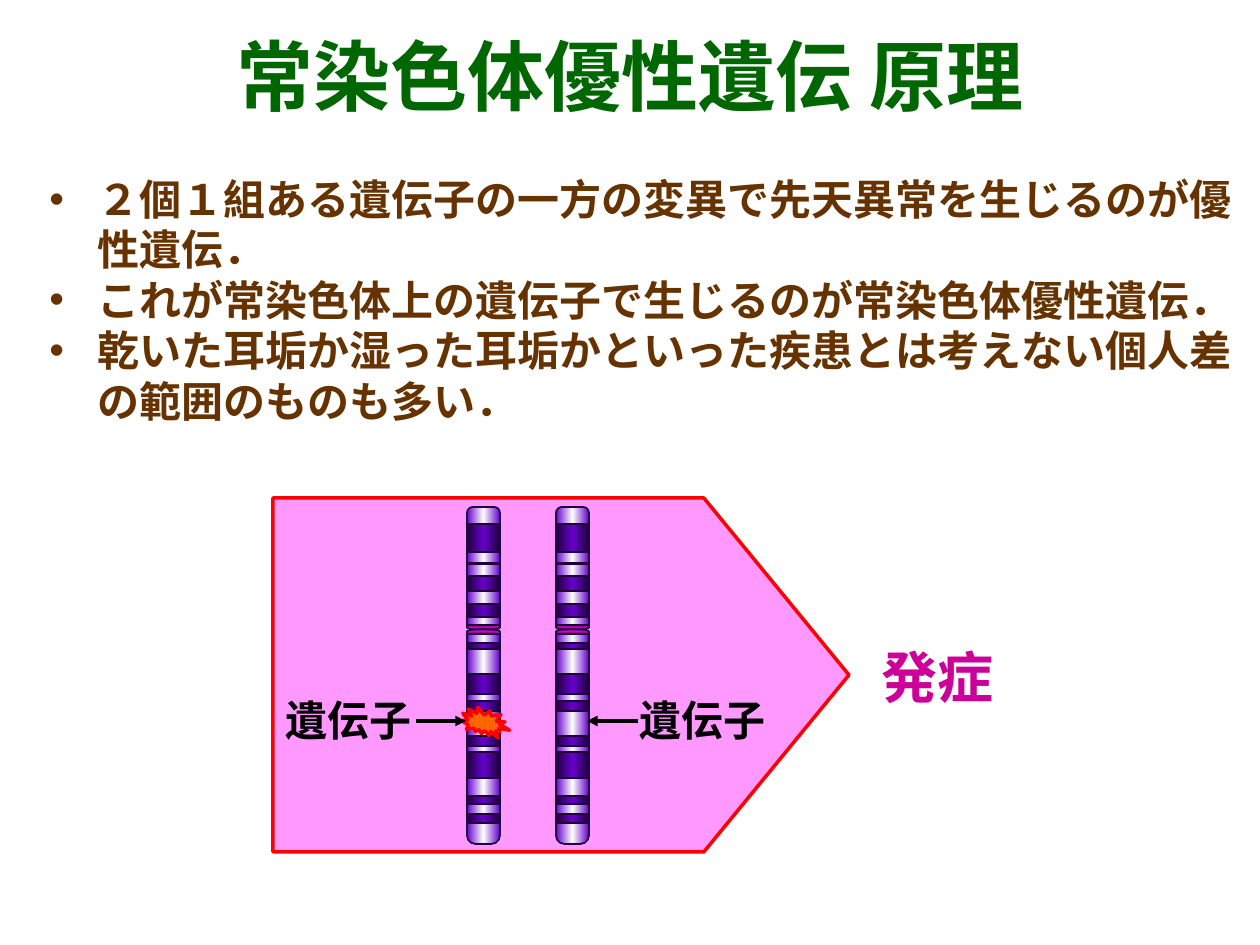
import lxml.etree
import pptx
import pptx.dml.color
import pptx.enum.shapes
import pptx.enum.text
import pptx.oxml.ns
import pptx.util

EMU_PER_PX = 914400 / 126
COLOURS = {
    "title": "006600", "body": "663300", "label": "000000", "outcome": "CC0099",
    "panel": "FF99FF", "alert": "FF0000", "mutation": "FF6600", "outline": "1E003C",
}
GRADIENTS = {
    "light": ("6600CC", "FFFFFF", "6600CC"),
    "dark": ("1E003C", "6600CC", "1E003C"),
    "centromere": ("660066", "CC00CC", "660066"),
}
JAPANESE_FONT = "Noto Sans CJK JP"
LATIN_FONT = "Arial"
BODY_POINTS = [
    "２個１組ある遺伝子の一方の変異で先天異常を生じるのが優性遺伝．",
    "これが常染色体上の遺伝子で生じるのが常染色体優性遺伝．",
    "乾いた耳垢か湿った耳垢かといった疾患とは考えない個人差の範囲のものも多い．",
]
CHROMOSOME_WIDTH = 33
# Top and height of each band, in drawing order
LIGHT_BANDS = [(634, 11), (614, 11)]
DARK_BANDS = [
    (604, 13), (643, 6), (674, 20), (576, 15), (563, 1), (524, 28),
    (701, 10), (736, 10), (752, 26), (796, 8), (814, 9),
]
SHAPES = pptx.enum.shapes.MSO_SHAPE


def px(value):
    return pptx.util.Emu(round(value * EMU_PER_PX))


def box(left, top, width, height):
    return px(left), px(top), px(width), px(height)


def colour(name):
    return pptx.dml.color.RGBColor.from_string(COLOURS[name])


def add_child(parent, tag, **attributes):
    return lxml.etree.SubElement(parent, pptx.oxml.ns.qn(tag), attributes)


def set_line(line, name, points):
    line.color.rgb = colour(name)
    line.width = pptx.util.Pt(points)


def add_run(paragraph, text, size, font, name):
    run = paragraph.add_run()
    run.text = text
    run.font.size = pptx.util.Pt(size)
    run.font.bold = True
    run.font.name = font
    run.font.color.rgb = colour(name)
    add_child(run.font._element, "a:ea", typeface=font)


def add_plain_shape(slide, kind, bounds, fill, rotation=0):
    shape = slide.shapes.add_shape(kind, *box(*bounds))
    shape.shadow.inherit = False
    shape.rotation = rotation
    shape.fill.solid()
    shape.fill.fore_color.rgb = colour(fill)
    set_line(shape.line, "alert", 2)
    return shape


def add_gradient_shape(group, kind, bounds, gradient, rotation=0):
    shape = group.shapes.add_shape(kind, *box(*bounds))
    shape.shadow.inherit = False
    shape.rotation = rotation
    shape.fill.gradient()
    shape.fill.gradient_angle = 0
    stops = shape._element.spPr.find(".//" + pptx.oxml.ns.qn("a:gsLst"))
    for stop in list(stops):
        stops.remove(stop)
    for position, value in zip((0, 50000, 100000), GRADIENTS[gradient]):
        stop = add_child(stops, "a:gs", pos=str(position))
        add_child(stop, "a:srgbClr", val=value)
    set_line(shape.line, "outline", 1)
    return shape


def add_chromosome(slide, left):
    group = slide.shapes.add_group_shape()
    for top, height, rounding in ((507, 121, 0.17), (629, 215, 0.26)):
        arm = add_gradient_shape(group, SHAPES.ROUNDED_RECTANGLE,
                                 (left, top, CHROMOSOME_WIDTH, height), "light")
        arm.adjustments[0] = rounding
    for gradient, bands in (("light", LIGHT_BANDS), ("dark", DARK_BANDS)):
        for top, height in bands:
            add_gradient_shape(group, SHAPES.RECTANGLE,
                               (left, top, CHROMOSOME_WIDTH, height), gradient)
    for top, rotation in ((611, 90), (615, 270)):
        add_gradient_shape(group, SHAPES.FLOWCHART_DELAY,
                           (left + 14, top, 5, CHROMOSOME_WIDTH), "centromere", rotation)


def add_arrow(slide, start, end, y):
    arrow = slide.shapes.add_connector(
        pptx.enum.shapes.MSO_CONNECTOR.STRAIGHT, px(start), px(y), px(end), px(y))
    set_line(arrow.line, "label", 2)
    add_child(arrow.line._get_or_add_ln(), "a:tailEnd", type="triangle")
    add_child(arrow._element.spPr, "a:effectLst")


def add_label(slide, text, bounds, size, name, wrap):
    frame = slide.shapes.add_textbox(*box(*bounds)).text_frame
    frame.word_wrap = wrap
    frame.auto_size = pptx.enum.text.MSO_AUTO_SIZE.SHAPE_TO_FIT_TEXT
    add_run(frame.paragraphs[0], text, size, LATIN_FONT, name)


def add_bullets(slide, points, bounds):
    frame = slide.shapes.add_textbox(*box(*bounds)).text_frame
    frame.word_wrap = True
    frame.vertical_anchor = pptx.enum.text.MSO_ANCHOR.MIDDLE
    for index, point in enumerate(points):
        paragraph = frame.add_paragraph() if index else frame.paragraphs[0]
        paragraph.line_spacing = pptx.util.Pt(28.8)
        properties = paragraph._p.get_or_add_pPr()
        properties.set("marL", str(px(48)))
        properties.set("indent", str(px(-48)))
        add_child(properties, "a:buFont", typeface=LATIN_FONT)
        add_child(properties, "a:buChar", char="•")
        add_run(paragraph, point, 24, JAPANESE_FONT, "body")


def set_title(slide, text, bounds):
    title = slide.shapes.title
    title.left, title.top, title.width, title.height = box(*bounds)
    frame = title.text_frame
    frame.auto_size = pptx.enum.text.MSO_AUTO_SIZE.NONE
    frame.vertical_anchor = pptx.enum.text.MSO_ANCHOR.MIDDLE
    paragraph = frame.paragraphs[0]
    paragraph.alignment = pptx.enum.text.PP_ALIGN.CENTER
    add_run(paragraph, text, 44, JAPANESE_FONT, "title")


def main():
    presentation = pptx.Presentation()
    presentation.slide_width, presentation.slide_height = px(1260), px(945)
    slide = presentation.slides.add_slide(presentation.slide_layouts[5])
    set_title(slide, "常染色体優性遺伝 原理", (35, 25, 1191, 100))

    panel = add_plain_shape(slide, SHAPES.PENTAGON, (273, 498, 576, 354), "panel")
    panel.adjustments[0] = 0.41
    add_bullets(slide, BODY_POINTS, (37, 166, 1212, 267))
    for left in (467, 556):
        add_chromosome(slide, left)

    add_arrow(slide, 638, 587, 721)
    for left in (273, 627):
        add_label(slide, "遺伝子", (left, 688, 154, 63), 24, "label", wrap=False)
    add_plain_shape(slide, SHAPES.EXPLOSION2, (461, 708, 49, 30), "mutation", 30)
    add_arrow(slide, 416, 466, 721)
    add_label(slide, "発症", (869, 636, 170, 79), 32, "outcome", wrap=True)
    presentation.save("out.pptx")


if __name__ == "__main__":
    main()
